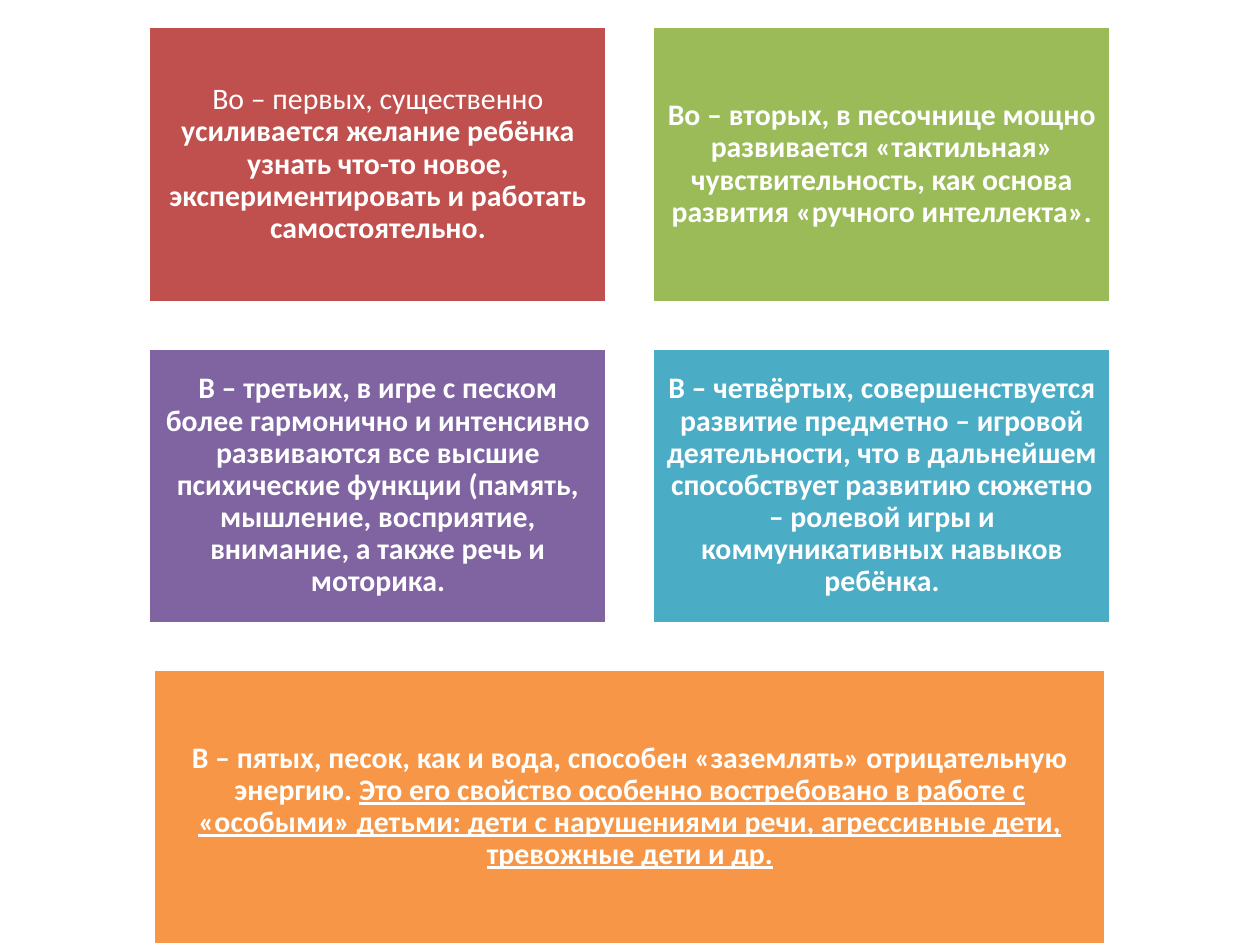
import pptx
import pptx.util
import pptx.dml.color
import pptx.enum.shapes
import pptx.enum.text

Inches, Pt = pptx.util.Inches, pptx.util.Pt
RGB = pptx.dml.color.RGBColor.from_string

COLORS = {
    "red": "C0504D",
    "green": "9BBB59",
    "purple": "8064A2",
    "teal": "4BACC6",
    "orange": "F79646",
    "white": "FFFFFF",
}

prs = pptx.Presentation()
prs.slide_width, prs.slide_height = Inches(10), Inches(7.5)
s = prs.slides.add_slide(prs.slide_layouts[6])

# Grid: two columns of equal cards, with one wide card centred below
CARD_W, CARD_H, WIDE_W = 3.64, 2.19, 7.56
LEFT, TOP, COL_STEP, ROW_STEP = 1.18, 0.21, 4.0, 2.55

# Each card: colour, width, runs as (text, bold, underline)
cards = [
    ("red", CARD_W, [
        ("Во – первых, существенно ", False, False),
        ("усиливается желание ребёнка узнать что-то новое, "
         "экспериментировать и работать самостоятельно.", True, False)]),
    ("green", CARD_W, [
        ("Во – вторых, в песочнице мощно развивается «тактильная» "
         "чувствительность, как основа развития «ручного интеллекта».", True, False)]),
    ("purple", CARD_W, [
        ("В – третьих, в игре с песком более гармонично и интенсивно "
         "развиваются все высшие психические функции (память, мышление, "
         "восприятие, внимание, а также речь и моторика.", True, False)]),
    ("teal", CARD_W, [
        ("В – четвёртых, совершенствуется развитие предметно – игровой "
         "деятельности, что в дальнейшем способствует развитию сюжетно – "
         "ролевой игры и коммуникативных навыков ребёнка.", True, False)]),
    ("orange", WIDE_W, [
        ("В – пятых, песок, как и вода, способен «заземлять» "
         "отрицательную энергию. ", True, False),
        ("Это его свойство особенно востребовано в работе с «особыми» "
         "детьми: дети с нарушениями речи, агрессивные дети, тревожные "
         "дети и др.", True, True)]),
]

for i, (color, width, runs) in enumerate(cards):
    row, col = divmod(i, 2)
    left = (10 - WIDE_W) / 2 if width == WIDE_W else LEFT + col * COL_STEP
    sp = s.shapes.add_shape(
        pptx.enum.shapes.MSO_SHAPE.RECTANGLE,
        Inches(left), Inches(TOP + row * ROW_STEP), Inches(width), Inches(CARD_H))
    sp.shadow.inherit = False
    sp.fill.solid()
    sp.fill.fore_color.rgb = RGB(COLORS[color])
    sp.line.color.rgb = RGB(COLORS["white"])
    sp.line.width = Pt(2)

    # Card text
    tf = sp.text_frame
    tf.word_wrap = True
    tf.vertical_anchor = pptx.enum.text.MSO_ANCHOR.MIDDLE
    tf.margin_left = tf.margin_right = tf.margin_top = tf.margin_bottom = Inches(0.07)
    p = tf.paragraphs[0]
    p.alignment = pptx.enum.text.PP_ALIGN.CENTER
    p.line_spacing = 0.9
    for text, bold, underline in runs:
        r = p.add_run()
        r.text = text
        r.font.name = "Calibri"
        r.font.size = Pt(17)
        r.font.bold = bold
        r.font.underline = underline
        r.font.color.rgb = RGB(COLORS["white"])

prs.save("out.pptx")
